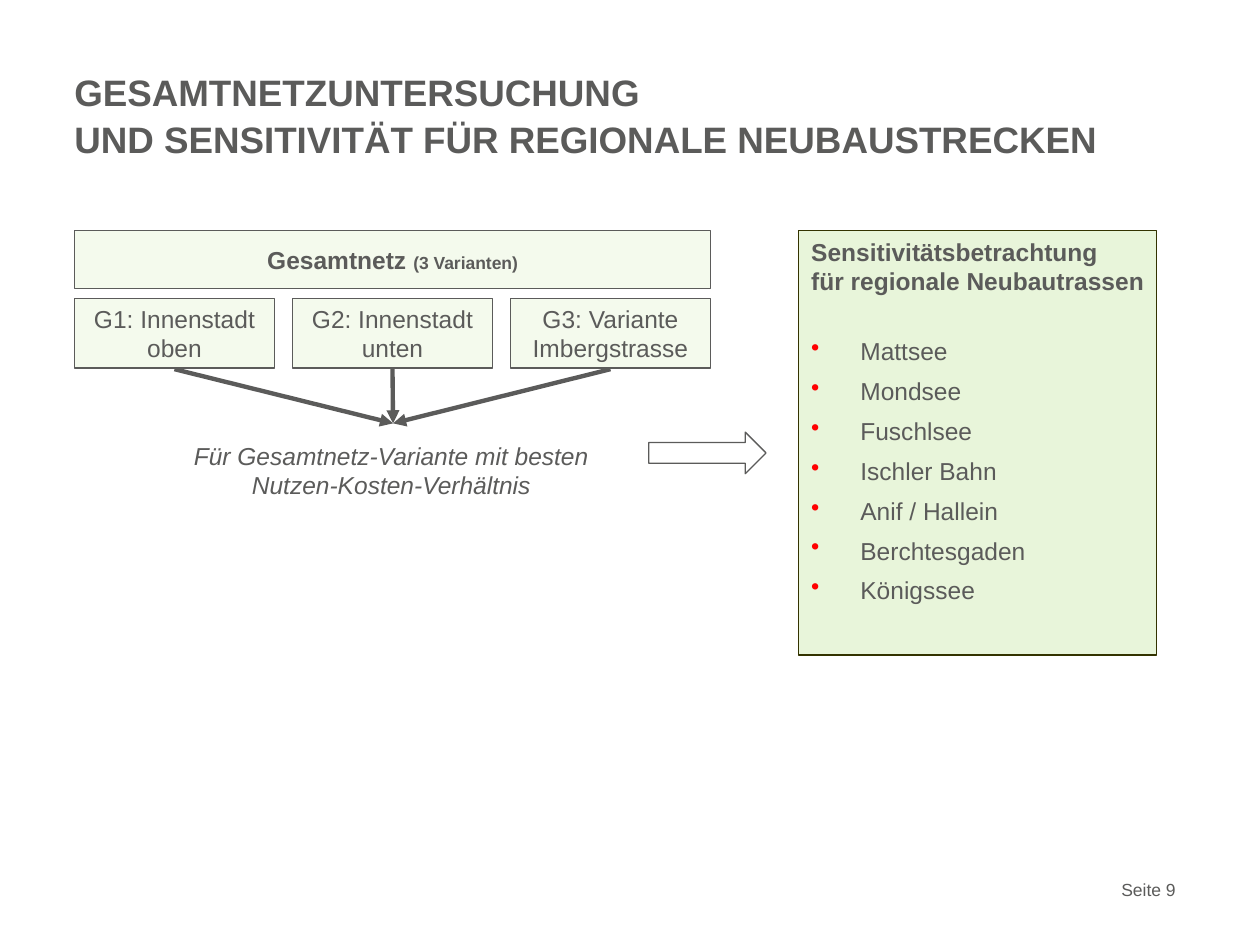
from lxml import etree
from pptx import Presentation
from pptx.dml.color import RGBColor
from pptx.enum.shapes import MSO_CONNECTOR, MSO_SHAPE
from pptx.enum.text import MSO_ANCHOR, PP_ALIGN
from pptx.oxml.ns import qn
from pptx.util import Inches, Pt

STRAIGHT = MSO_CONNECTOR.STRAIGHT
RECTANGLE, RIGHT_ARROW = MSO_SHAPE.RECTANGLE, MSO_SHAPE.RIGHT_ARROW
TOP, MIDDLE, BOTTOM = MSO_ANCHOR.TOP, MSO_ANCHOR.MIDDLE, MSO_ANCHOR.BOTTOM
LEFT, CENTER = PP_ALIGN.LEFT, PP_ALIGN.CENTER
GREY, PALE_GREEN, GREEN = "5B5B5A", "F4FAED", "E8F5DA"
rgb = RGBColor.from_string

prs = Presentation()
prs.slide_width, prs.slide_height = Inches(10), Inches(7.5)
slide = prs.slides.add_slide(prs.slide_layouts[6])


def write(shape, text, size=14, align=LEFT, anchor=TOP, bold=False, italic=False, margins=None):
    frame = shape.text_frame
    frame.text = text
    frame.word_wrap = True
    frame.vertical_anchor = anchor
    if margins:
        (frame.margin_left, frame.margin_top,
         frame.margin_right, frame.margin_bottom) = map(Inches, margins)
    for paragraph in frame.paragraphs:
        paragraph.alignment = align
        for run in paragraph.runs:
            run.font.name = "Arial"
            run.font.size = Pt(size)
            run.font.bold = bold
            run.font.italic = italic
            run.font.color.rgb = rgb(GREY)
    return frame


def add_block(kind, left, top, width, height, fill, line=GREY):
    block = slide.shapes.add_shape(kind, Inches(left), Inches(top), Inches(width), Inches(height))
    block.shadow.inherit = False
    block.fill.solid()
    block.fill.fore_color.rgb = rgb(fill)
    block.line.color.rgb = rgb(line)
    block.line.width = Pt(0.75)
    return block


page = slide.shapes.add_textbox(Inches(8.9), Inches(6.9), Inches(0.67), Inches(0.24))
write(page, "Seite 9", 10, anchor=BOTTOM, margins=(0, 0, 0, 0)).word_wrap = False

title = slide.shapes.add_textbox(Inches(0.59), Inches(0.54), Inches(8.77), Inches(0.8))
heading = write(title, "GESAMTNETZUNTERSUCHUNG\vUND SENSITIVITÄT FÜR REGIONALE NEUBAUSTRECKEN",
                21, bold=True, margins=(0, 0, 0, 0))
heading.paragraphs[0].line_spacing = 1.05

network = add_block(RECTANGLE, 0.59, 1.83, 5.05, 0.46, PALE_GREEN)
network_label = write(network, "Gesamtnetz ", align=CENTER, anchor=MIDDLE, bold=True).paragraphs[0]
count = network_label.add_run()
count.text = "(3 Varianten)"
count.font.name = "Arial"
count.font.size = Pt(10)
count.font.bold = True
count.font.color.rgb = rgb(GREY)

variants = ["G1: Innenstadt oben", "G2: Innenstadt unten", "G3: Variante\nImbergstrasse"]
for index, variant in enumerate(variants):
    left = 0.59 + index * 1.73
    box = add_block(RECTANGLE, left, 2.37, 1.59, 0.55, PALE_GREEN)
    write(box, variant, align=CENTER, anchor=MIDDLE)
    arrow = slide.shapes.add_connector(
        STRAIGHT, Inches(left + 0.795), Inches(2.93), Inches(3.12), Inches(3.36))
    arrow.line.color.rgb = rgb(GREY)
    arrow.line.width = Pt(2.5)
    etree.SubElement(arrow.line._get_or_add_ln(), qn("a:tailEnd"), type="triangle")
    etree.SubElement(arrow._element.spPr, qn("a:effectLst"))

best = slide.shapes.add_textbox(Inches(1.17), Inches(3.36), Inches(3.89), Inches(0.66))
write(best, "Für Gesamtnetz-Variante mit besten Nutzen-Kosten-Verhältnis",
      align=CENTER, italic=True, margins=(0.08, 0.14, 0.1, 0.05))

add_block(RIGHT_ARROW, 5.15, 3.43, 0.93, 0.33, "FFFFFF")

sensitivity = add_block(RECTANGLE, 6.34, 1.83, 2.84, 3.37, GREEN, "333300")
regions = ["Mattsee", "Mondsee", "Fuschlsee", "Ischler Bahn",
           "Anif / Hallein", "Berchtesgaden", "Königssee"]
sensitivity_heading = "Sensitivitätsbetrachtung\vfür regionale Neubautrassen"
sensitivity_text = write(sensitivity, "\n".join([sensitivity_heading] + regions),
                         margins=(0.1, 0.05, 0.05, 0.05))
intro, *entries = sensitivity_text.paragraphs
intro.space_after = Pt(17)
for run in intro.runs:
    run.font.bold = True
for entry in entries:
    entry.space_before = Pt(6)
    properties = entry._p.get_or_add_pPr()
    properties.set("marL", str(Inches(0.39)))
    properties.set("indent", str(-Inches(0.39)))
    bullet_color = etree.SubElement(properties, qn("a:buClr"))
    etree.SubElement(bullet_color, qn("a:srgbClr"), val="FF0000")
    etree.SubElement(properties, qn("a:buChar"), char="•")

prs.save("out.pptx")
